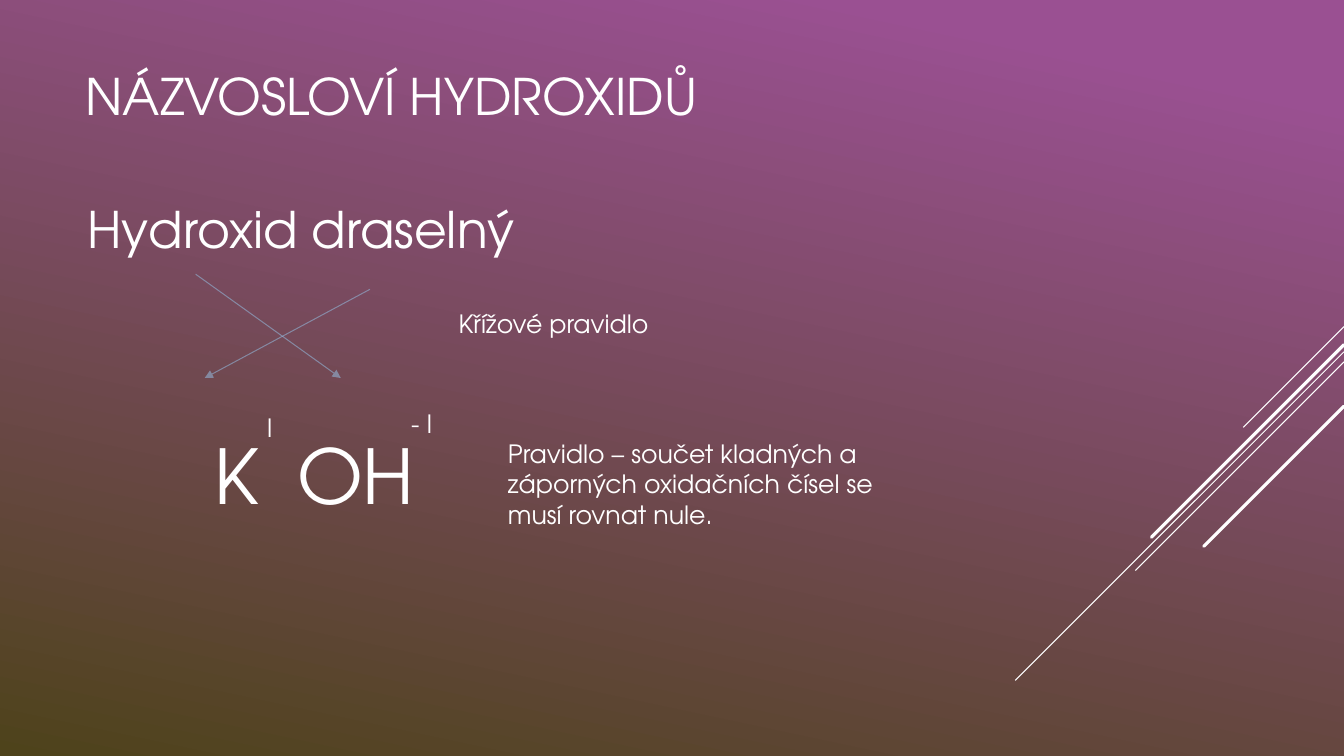
from lxml import etree
from pptx import Presentation
from pptx.dml.color import RGBColor
from pptx.enum.shapes import MSO_CONNECTOR
from pptx.enum.text import MSO_ANCHOR, MSO_AUTO_SIZE
from pptx.oxml.ns import qn
from pptx.util import Inches, Pt

STRAIGHT = MSO_CONNECTOR.STRAIGHT
TOP, MIDDLE = MSO_ANCHOR.TOP, MSO_ANCHOR.MIDDLE
GROW, FIXED = MSO_AUTO_SIZE.SHAPE_TO_FIT_TEXT, MSO_AUTO_SIZE.NONE

FONT = "TeX Gyre Adventor"
COLORS = {
    "text": "FFFFFF",
    "stripe": "FFFFFF",
    "arrow": "92B2D4",
    "bg_top": "9A5092",
    "bg_bottom": "4E431B",
}
RIGHT_EDGE = 13.33


def rgb(name):
    return RGBColor.from_string(COLORS[name])


def set_background(s):
    fill = s.background.fill
    fill.gradient()
    fill.gradient_angle = 258
    stops = (("bg_top", 0.1), ("bg_bottom", 1))
    for stop, (color, position) in zip(fill.gradient_stops, stops):
        stop.color.rgb = rgb(color)
        stop.position = position


def add_line(s, start, end, color, width):
    sp = s.shapes.add_connector(STRAIGHT, *map(Inches, start + end))
    sp.line.color.rgb = rgb(color)
    sp.line.width = Pt(width)
    etree.SubElement(sp._element.spPr, qn("a:effectLst"))
    return sp


def add_stripe(s, top, run, width):
    sp = add_line(s, (RIGHT_EDGE, top), (RIGHT_EDGE - run, top + run), "stripe", width)
    if width > 1:
        sp.line._get_or_add_ln().set("cap", "rnd")


def add_arrow(s, start, end):
    ln = add_line(s, start, end, "arrow", 0.75).line._get_or_add_ln()
    color = ln.find(".//" + qn("a:srgbClr"))
    etree.SubElement(color, qn("a:alpha"), val="60000")
    etree.SubElement(ln, qn("a:tailEnd"), type="triangle")


def add_text(s, text, box, size, wrap=True, anchor=TOP, auto_size=GROW):
    tf = s.shapes.add_textbox(*map(Inches, box)).text_frame
    tf.word_wrap = wrap
    tf.auto_size = auto_size
    tf.vertical_anchor = anchor
    r = tf.paragraphs[0].add_run()
    r.text = text
    r.font.name = FONT
    r.font.size = Pt(size)
    r.font.color.rgb = rgb("text")


def main():
    prs = Presentation()
    prs.slide_width, prs.slide_height = Inches(13.33), Inches(7.5)
    s = prs.slides.add_slide(prs.slide_layouts[6])
    set_background(s)

    for top, run, width in (
        (3.24, 1, 0.75),
        (3.49, 3.26, 0.75),
        (3.59, 2.07, 0.75),
        (3.42, 1.91, 2.25),
        (4.03, 1.39, 2.25),
    ):
        add_stripe(s, top, run, width)

    add_text(s, "NÁZVOSLOVÍ HYDROXIDŮ", (0.75, 0.43, 9.33, 1.04), 36,
             anchor=MIDDLE, auto_size=FIXED)
    add_text(s, "Hydroxid draselný", (0.77, 1.92, 4.74, 0.71), 36)

    add_arrow(s, (3.67, 2.87), (2.03, 3.75))
    add_arrow(s, (1.94, 2.72), (3.38, 3.75))

    add_text(s, "K", (2.03, 4.21, 0.65, 1.01), 54, wrap=False)
    add_text(s, "OH", (2.85, 4.21, 1.55, 1.01), 54)
    add_text(s, "- I", (3.98, 4, 0.41, 0.4), 18, wrap=False)
    add_text(s, "I", (2.55, 4.04, 0.26, 0.4), 18, wrap=False)
    add_text(s, "Křížové pravidlo", (4.45, 3.01, 2.12, 0.4), 18, wrap=False)
    add_text(s, "Pravidlo – součet kladných a záporných oxidačních čísel se musí rovnat nule.",
             (4.94, 4.3, 4.3, 1.01), 18)

    prs.save("out.pptx")


if __name__ == "__main__":
    main()
